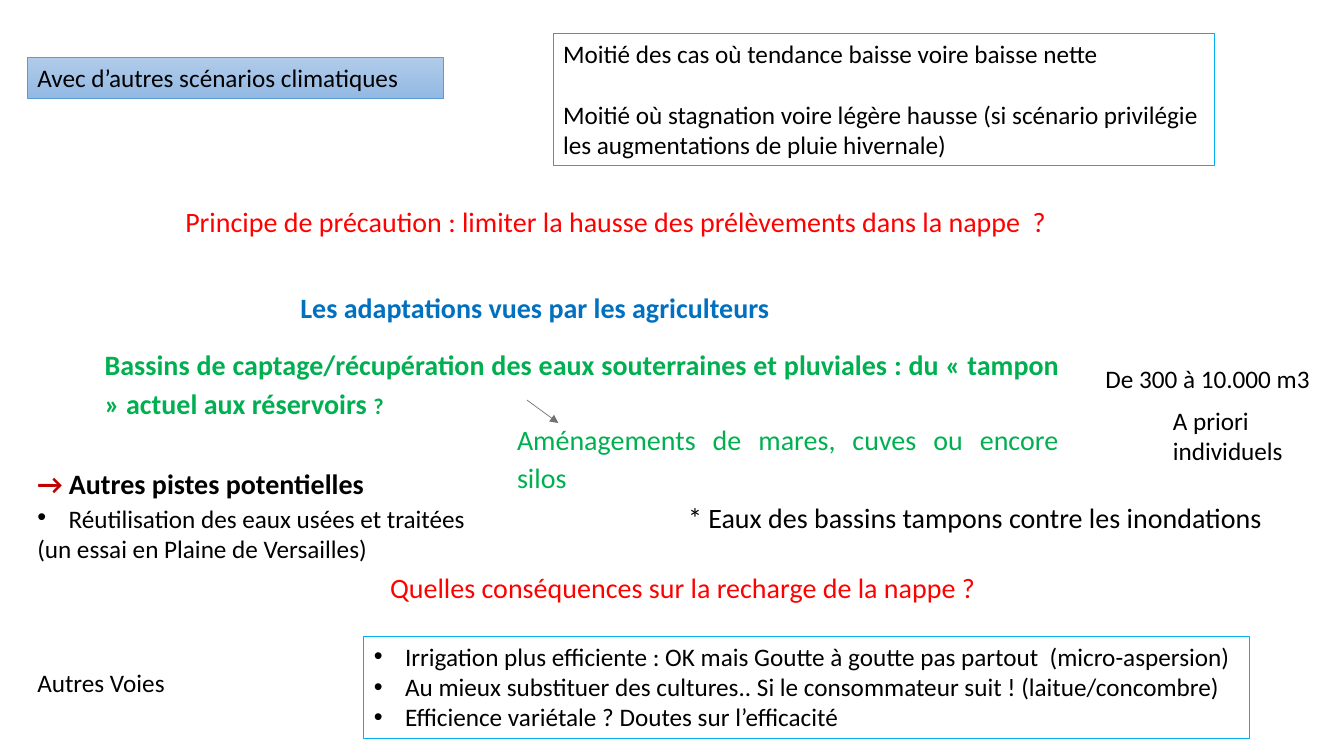
from dataclasses import dataclass

from lxml import etree
from pptx import Presentation
from pptx import util as u
from pptx.dml.color import RGBColor
from pptx.enum import shapes, text
from pptx.oxml import ns


@dataclass(frozen=True)
class Theme:
    """Colours, font and type sizes of the slide."""
    font: str = "Calibri"
    body: int = 18
    lead: int = 20
    small: int = 16
    black: str = "000000"
    red: str = "FF0000"
    dark_red: str = "C00000"
    green: str = "00B050"
    blue: str = "0070C0"
    cyan: str = "00B0F0"
    grey: str = "767171"
    banner_line: str = "5B9BD5"
    banner_fill: tuple = ("B1CBE9", "93B9E4")


T = Theme()
JUSTIFIED = {"alignment": text.PP_ALIGN.JUSTIFY, "line_spacing": 1.15}
INDENT = 0.79


def rgb(code):
    """Turn a hex code into a colour."""
    return RGBColor.from_string(code)


def apply(target, values):
    """Set each named attribute on the target."""
    for name, value in values.items():
        setattr(target, name, value)


def run(words, size=T.body, color=T.black, bold=False):
    """Describe one run of text."""
    return words, color, {"name": T.font, "size": u.Pt(size), "bold": bold}


def para(*runs, bullet=False, tab=None, **fmt):
    """Describe one paragraph."""
    return runs, bullet, tab, fmt


def add_bullet(p):
    """Give a paragraph a hanging round bullet."""
    pPr = p._p.get_or_add_pPr()
    pPr.set("marL", str(u.Cm(INDENT)))
    pPr.set("indent", str(-u.Cm(INDENT)))
    etree.SubElement(pPr, ns.qn("a:buFont"), typeface="Arial")
    etree.SubElement(pPr, ns.qn("a:buChar"), char="•")


def add_tab(p, position):
    """Give a paragraph a left tab stop."""
    tabs = etree.SubElement(p._p.get_or_add_pPr(), ns.qn("a:tabLst"))
    etree.SubElement(tabs, ns.qn("a:tab"), pos=str(u.Cm(position)), algn="l")


def fill_text(sp, paras):
    """Write paragraphs into a shape from its top left."""
    tf = sp.text_frame
    apply(tf, {"word_wrap": True, "vertical_anchor": text.MSO_ANCHOR.TOP})
    for i, (runs, bullet, tab, fmt) in enumerate(paras):
        p = tf.add_paragraph() if i else tf.paragraphs[0]
        if bullet:
            add_bullet(p)
        if tab:
            add_tab(p, tab)
        apply(p, {"alignment": text.PP_ALIGN.LEFT, **fmt})
        for words, color, font in runs:
            r = p.add_run()
            r.text = words
            apply(r.font, font)
            r.font.color.rgb = rgb(color)


def place(box, x, y, w, h):
    """Place a rectangle relative to the corner of a region."""
    left, top = box
    return [u.Cm(v) for v in (left + x, top + y, w, h)]


def label(s, area, *paras):
    """Add a plain text box."""
    fill_text(s.shapes.add_textbox(*area), paras)


def framed(s, area, color, width, *paras):
    """Add an outlined rectangle with text."""
    sp = s.shapes.add_shape(shapes.MSO_SHAPE.RECTANGLE, *area)
    sp.shadow.inherit = False
    sp.fill.background()
    sp.line.color.rgb = rgb(color)
    sp.line.width = u.Pt(width)
    fill_text(sp, paras)
    return sp


def arrow(s, area):
    """Add a thin arrow across an area, from top left to bottom right."""
    x, y, w, h = area
    c = s.shapes.add_connector(shapes.MSO_CONNECTOR.STRAIGHT, x, y, x + w, y + h)
    c.line.color.rgb = rgb(T.grey)
    c.line.width = u.Pt(0.5)
    etree.SubElement(c.line._get_or_add_ln(), ns.qn("a:tailEnd"), type="triangle")
    etree.SubElement(c._element.spPr, ns.qn("a:effectLst"))


def scenarios(s, box):
    """Draw the climate scenarios, their trends and the precaution."""
    banner = framed(s, place(box, 0, 0.61, 10.49, 1.02), T.banner_line, 0.5,
                    para(run("Avec d’autres scénarios climatiques")))
    banner.fill.gradient()
    banner.fill.gradient_angle = 270
    for stop, color in zip(banner.fill.gradient_stops, T.banner_fill):
        stop.color.rgb = rgb(color)
    framed(s, place(box, 13.25, 0, 16.66, 3.33), T.cyan, 0.75,
           para(run("Moitié des cas où tendance baisse voire baisse nette")),
           para(run("Moitié où stagnation voire légère hausse (si scénario privilégie "
                    "les augmentations de pluie hivernale)"), space_before=u.Pt(22)))
    label(s, place(box, 3.73, 4.19, 24.28, 1.12),
          para(run("Principe de précaution : limiter la hausse des prélèvements "
                   "dans la nappe  ?", T.lead, T.red)))


def adaptations(s, box):
    """Draw the adaptations seen by farmers."""
    label(s, place(box, 4.93, 0, 17.93, 1.12),
          para(run("Les adaptations vues par les agriculteurs", T.lead, T.blue, True)))
    label(s, place(box, 0, 1.32, 24.56, 2.1),
          para(run("Bassins de captage/récupération des eaux souterraines et pluviales : "
                   "du « tampon » actuel aux réservoirs ", T.lead, T.green, True),
               run("?", T.small, T.green, True), **JUSTIFIED))
    arrow(s, place(box, 10.89, 2.89, 0.79, 0.58))
    label(s, place(box, 10.39, 3.2, 14.15, 1.17),
          para(run("Aménagements de mares, cuves ou encore silos", T.lead, T.green),
               **JUSTIFIED))
    label(s, place(box, 25.22, 1.83, 5.99, 1.02), para(run("De 300 à 10.000 m3")))
    label(s, place(box, 26.92, 2.89, 4.5, 1.8), para(run("A priori individuels")))


def leads(s, box):
    """Draw the other potential leads and the question they raise."""
    label(s, place(box, 0, 0, 32.39, 2.74),
          para(run("→", T.lead, T.dark_red, True),
               run(" Autres pistes potentielles", T.lead, bold=True)),
          para(run("Réutilisation des eaux usées et traitées\t"),
               run("* Eaux des bassins tampons contre les inondations", T.lead),
               bullet=True, tab=16.4),
          para(run("(un essai en Plaine de Versailles)")))
    label(s, place(box, 8.89, 2.62, 19.1, 1.12),
          para(run("Quelles conséquences sur la recharge de la nappe ?", T.lead, T.red)))


def other_ways(s, box):
    """Draw the other ways and their framed list."""
    ways = ("Irrigation plus efficiente : OK mais Goutte à goutte pas partout  (micro-aspersion)",
            "Au mieux substituer des cultures.. Si le consommateur suit ! (laitue/concombre)",
            "Efficience variétale ? Doutes sur l’efficacité")
    label(s, place(box, 0, 0.66, 8.48, 1.02), para(run("Autres Voies")))
    framed(s, place(box, 8.48, 0, 22.33, 2.57), T.cyan, 0.75,
           *(para(run(way), bullet=True) for way in ways))


def main():
    """Build the slide and save it."""
    prs = Presentation()
    apply(prs, {"slide_width": u.Cm(33.87), "slide_height": u.Cm(19.05)})
    s = prs.slides.add_slide(prs.slide_layouts[6])
    scenarios(s, (0.69, 0.84))
    adaptations(s, (2.39, 7.19))
    leads(s, (0.69, 11.63))
    other_ways(s, (0.69, 16.03))
    prs.save("out.pptx")


if __name__ == "__main__":
    main()
